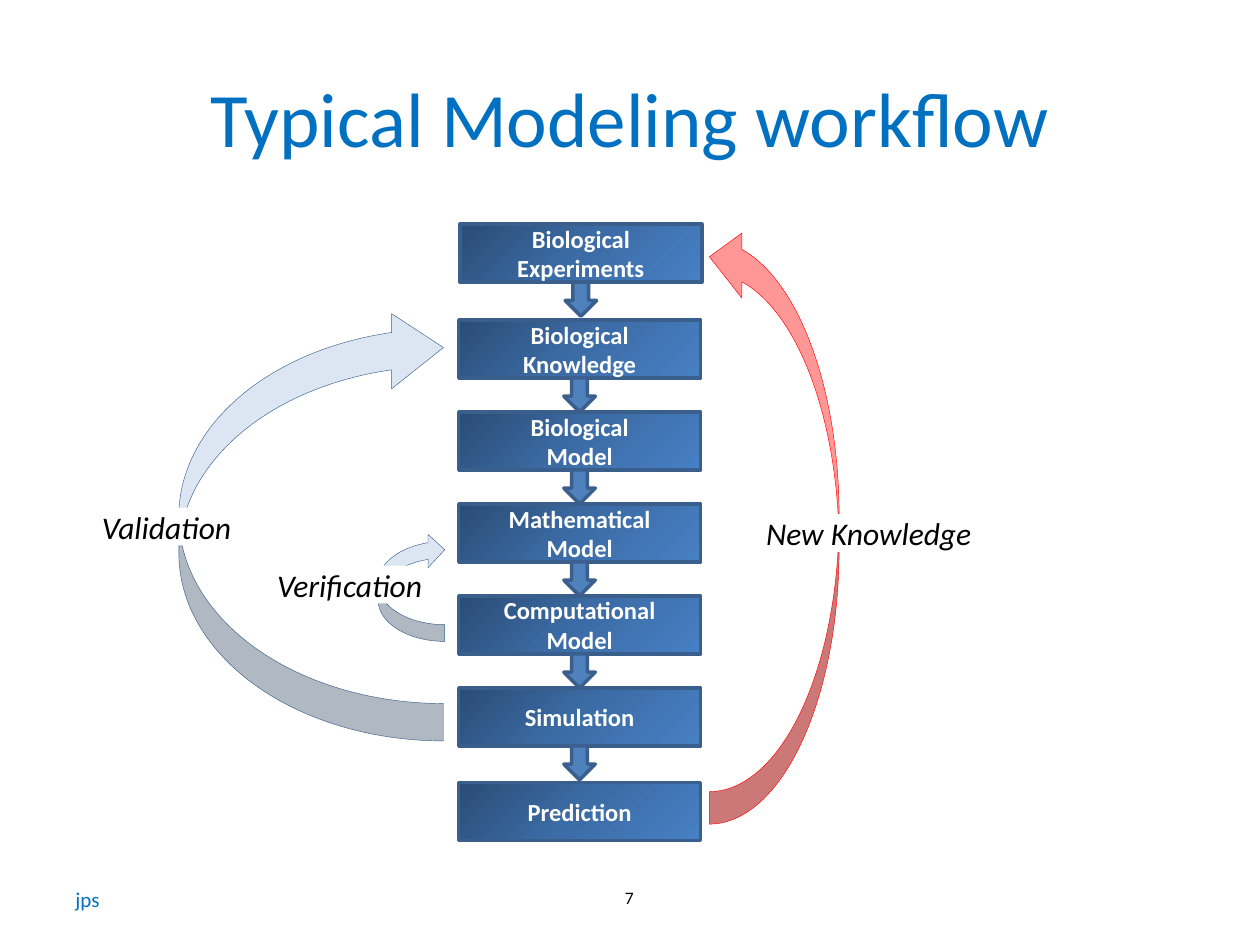
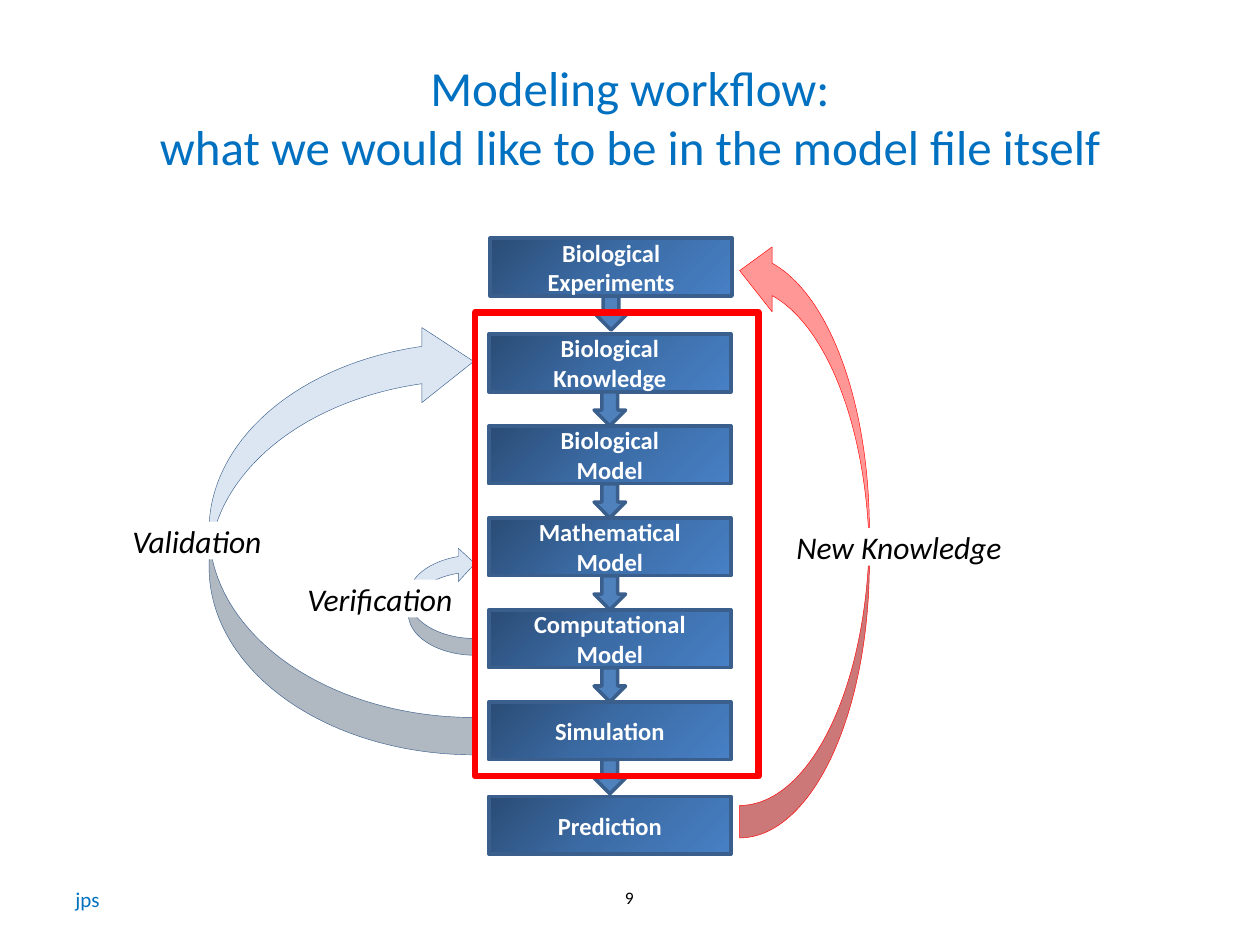
import copy
from dataclasses import dataclass

import pptx
import pptx.dml.color
import pptx.enum.shapes
import pptx.enum.text
import pptx.util

# Content
SLIDES = [
    {"title": ["Typical Modeling workflow"], "title_size": 44, "number": "7",
     "shift": (0, 0), "framed_steps": None},
    {"title": ["Modeling workflow:", "what we would like to be in the model file itself"],
     "title_size": 28, "number": "9", "shift": (0.24, 0.11), "framed_steps": (1, 5)},
]
FOOTER = "jps"

# Lines of each step and the gap below it
STEPS = [
    (["Biological", "Experiments"], 0.3),
    (["Biological", "Knowledge"], 0.27),
    (["Biological", "Model"], 0.27),
    (["Mathematical", "Model"], 0.27),
    (["Computational", "Model"], 0.27),
    (["Simulation"], 0.29),
    (["Prediction"], 0),
]

# Feedback arrows: box (left, top, width, height), side of the flow, adjustments
LOOPS = [
    ((3, 4.23, 0.53, 0.86), "left", ()),
    ((1.42, 2.46, 2.1, 3.42), "left", (0.141, 0.284, 0.196)),
    ((5.63, 1.78, 1.03, 4.76), "right", ()),
]
LABELS = [
    ("Verification", (2.2, 4.49, 1.17, 0.3)),
    ("Validation", (0.81, 4.03, 1.04, 0.3)),
    ("New Knowledge", (6.08, 4.08, 1.65, 0.3)),
]

# Geometry in inches
SLIDE_WIDTH, SLIDE_HEIGHT = 10, 7.5
FLOW_LEFT, FLOW_TOP = 3.64, 1.78
STEP_WIDTH, STEP_HEIGHT = 1.92, 0.46
ARROW_WIDTH, ARROW_HEIGHT = 0.25, 0.27
FIRST_STEP_OFFSET = 0.01
FRAME_LEFT, FRAME_TOP, FRAME_RIGHT, FRAME_BOTTOM = 0.11, 0.17, 0.22, 0.13


@dataclass(frozen=True)
class Theme:
    font: str = "Calibri"
    accent: str = "0070C0"
    ink: str = "000000"
    paper: str = "FFFFFF"
    outline: str = "3A5F8C"
    arrow: str = "4F81BD"
    step_gradient: tuple = ((0, "2A4C75"), (0.5, "3C6CA6"), (1, "4780C5"))
    loop_left: tuple = ("DCE6F2", "3A5F8C")
    loop_right: tuple = ("FF9797", "FF0000")
    frame: str = "FF0000"
    step_size: int = 14
    label_size: int = 18
    footer_size: int = 12
    number_size: int = 10
    thin: float = 0.25
    medium: float = 2
    thick: float = 3.75


THEME = Theme()
SHAPE = pptx.enum.shapes.MSO_SHAPE
CENTER = pptx.enum.text.PP_ALIGN.CENTER
MIDDLE = pptx.enum.text.MSO_ANCHOR.MIDDLE


def rgb(value):
    return pptx.dml.color.RGBColor.from_string(value)


def inches(box):
    return [pptx.util.Inches(length) for length in box]


def write(shape, lines, size, color, bold=False, italic=False, centered=True, wrap=True):
    """Put the lines in one paragraph, parted by line breaks."""
    frame = shape.text_frame
    frame.word_wrap = wrap
    paragraph = frame.paragraphs[0]
    if centered:
        frame.vertical_anchor = MIDDLE
        paragraph.alignment = CENTER
    else:
        paragraph.alignment = pptx.enum.text.PP_ALIGN.LEFT
    for index, line in enumerate(lines):
        if index:
            paragraph.add_line_break()
        run = paragraph.add_run()
        run.text = line
        run.font.name = THEME.font
        run.font.size = pptx.util.Pt(size)
        run.font.bold = bold
        run.font.italic = italic
        run.font.color.rgb = rgb(color)
    paragraph.font.size = pptx.util.Pt(size)


def add_text(slide, box, lines, size, color, **style):
    write(slide.shapes.add_textbox(*inches(box)), lines, size, color, **style)


def add_shape(slide, preset, box, fill=None, line=None, line_width=0):
    shape = slide.shapes.add_shape(preset, *inches(box))
    shape.shadow.inherit = False
    if fill:
        shape.fill.solid()
        shape.fill.fore_color.rgb = rgb(fill)
    else:
        shape.fill.background()
    if line:
        shape.line.color.rgb = rgb(line)
        shape.line.width = pptx.util.Pt(line_width)
    else:
        shape.line.fill.background()
    return shape


def fill_gradient(shape, stops):
    shape.fill.gradient()
    shape.fill.gradient_angle = 315
    stop_list = shape.element.spPr.find(".//" + pptx.oxml.ns.qn("a:gsLst"))
    while len(stop_list) < len(stops):
        stop_list.append(copy.deepcopy(stop_list[0]))
    for stop, (position, color) in zip(shape.fill.gradient_stops, stops):
        stop.position = position
        stop.color.rgb = rgb(color)


def add_loop(slide, box, side, adjustments):
    fill, line = THEME.loop_left if side == "left" else THEME.loop_right
    loop = add_shape(slide, SHAPE.CURVED_RIGHT_ARROW, box, fill, line, THEME.thin)
    loop.rotation = 180
    if side == "left":
        loop.element.spPr.xfrm.set("flipH", "1")
    for index, value in enumerate(adjustments):
        loop.adjustments[index] = value


def add_label(slide, text, box):
    label = add_shape(slide, SHAPE.RECTANGLE, box, THEME.paper)
    frame = label.text_frame
    frame.margin_left = frame.margin_right = frame.margin_top = frame.margin_bottom = 0
    write(label, [text], THEME.label_size, THEME.ink, italic=True, centered=False, wrap=False)
    frame.vertical_anchor = pptx.enum.text.MSO_ANCHOR.TOP


def step_boxes(shift):
    """Return the box of each step, stacked downwards by the gaps."""
    left, top = FLOW_LEFT + shift[0], FLOW_TOP + shift[1]
    boxes = []
    for index, (_, gap) in enumerate(STEPS):
        offset = 0 if index else FIRST_STEP_OFFSET
        boxes.append((left + offset, top, STEP_WIDTH, STEP_HEIGHT))
        top += STEP_HEIGHT + gap
    return boxes


def add_step(slide, lines, box):
    step = add_shape(slide, SHAPE.RECTANGLE, box, THEME.arrow, THEME.outline, THEME.medium)
    fill_gradient(step, THEME.step_gradient)
    write(step, lines, THEME.step_size, THEME.paper, bold=True)


def add_flow(slide, boxes):
    """Draw the steps and the arrows between them, the first step on top."""
    steps = [(lines, box) for (lines, _), box in zip(STEPS, boxes)]
    for lines, box in steps[1:]:
        add_step(slide, lines, box)
    for left, top, width, height in boxes[:-1]:
        arrow_box = (left + (width - ARROW_WIDTH) / 2, top + height, ARROW_WIDTH, ARROW_HEIGHT)
        add_shape(slide, SHAPE.DOWN_ARROW, arrow_box, THEME.arrow, THEME.outline, THEME.medium)
    add_step(slide, *steps[0])


def add_frame(slide, first, last):
    left, top = first[0] - FRAME_LEFT, first[1] - FRAME_TOP
    right = first[0] + STEP_WIDTH + FRAME_RIGHT
    bottom = last[1] + STEP_HEIGHT + FRAME_BOTTOM
    add_shape(slide, SHAPE.RECTANGLE, (left, top, right - left, bottom - top),
              line=THEME.frame, line_width=THEME.thick)


def add_slide(presentation, content):
    slide = presentation.slides.add_slide(presentation.slide_layouts[6])
    shift = content["shift"]

    def shifted(box):
        return (box[0] + shift[0], box[1] + shift[1], *box[2:])

    add_text(slide, (0.5, 6.99, 0.4, 0.3), [FOOTER], THEME.footer_size, THEME.accent,
             centered=False, wrap=False)
    add_text(slide, (3.83, 6.92, 2.33, 0.4), [content["number"]], THEME.number_size, THEME.ink)
    add_text(slide, (0.5, 0.3, SLIDE_WIDTH - 1, 1.25), content["title"],
             content["title_size"], THEME.accent)
    for box, side, adjustments in LOOPS:
        add_loop(slide, shifted(box), side, adjustments)
    for text, box in LABELS:
        add_label(slide, text, shifted(box))
    boxes = step_boxes(shift)
    add_flow(slide, boxes)
    if content["framed_steps"]:
        first, last = content["framed_steps"]
        add_frame(slide, boxes[first], boxes[last])


def main():
    presentation = pptx.Presentation()
    presentation.slide_width = pptx.util.Inches(SLIDE_WIDTH)
    presentation.slide_height = pptx.util.Inches(SLIDE_HEIGHT)
    for content in SLIDES:
        add_slide(presentation, content)
    presentation.save("out.pptx")


if __name__ == "__main__":
    main()
